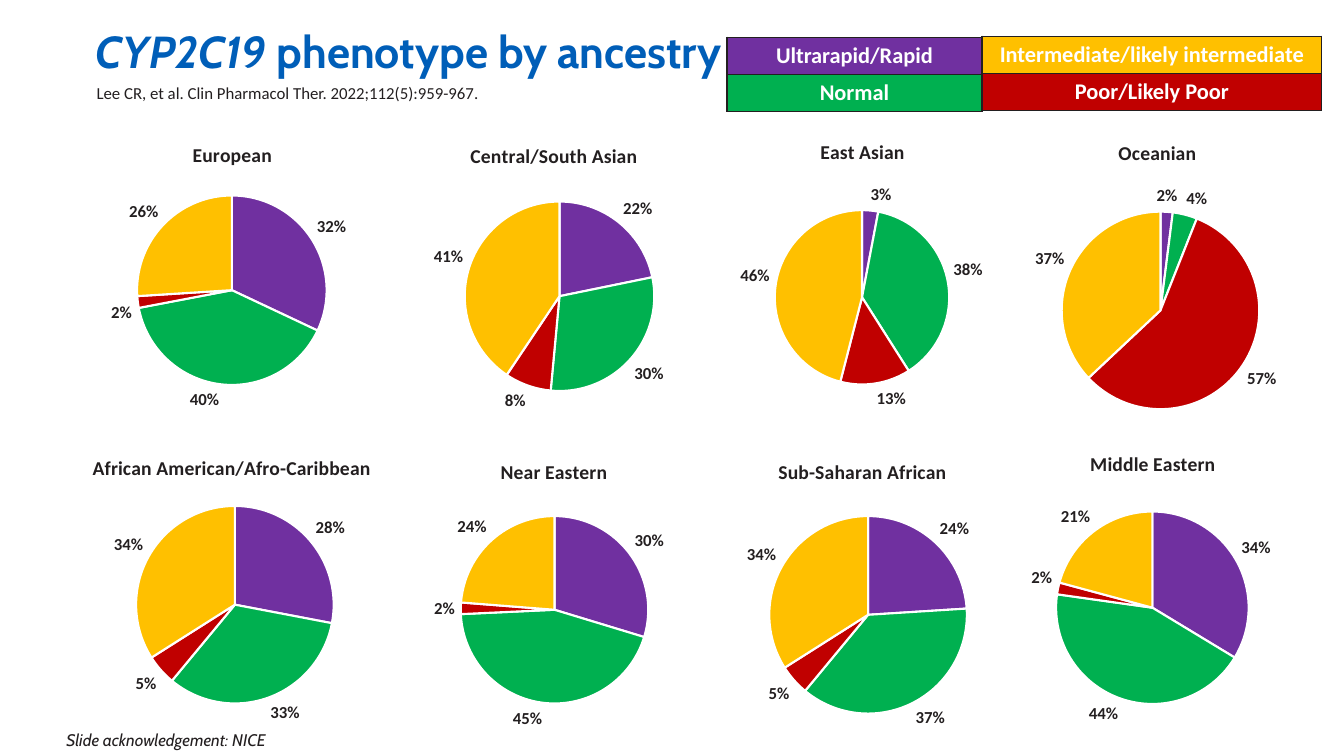
import lxml.etree
import pptx
import pptx.chart.data
import pptx.dml.color
import pptx.enum.chart
import pptx.enum.text
import pptx.oxml.ns
import pptx.util

PX = 9144
WIDTH, HEIGHT = 1333, 750
color = pptx.dml.color.RGBColor.from_string
qn = pptx.oxml.ns.qn

theme = {
    "ink": "231F20",
    "heading": "005EB8",
    "white": "FFFFFF",
    "Ultrarapid/Rapid": "7030A0",
    "Normal": "00B050",
    "Poor/Likely Poor": "C00000",
    "Intermediate/likely intermediate": "FFC000",
    "display": "Cabin",
    "body": "Calibri",
    "heading_size": 32,
    "legend_size": 16,
    "ancestry_size": 14,
    "label_size": 12,
    "chart_size": 10,
}
phenotypes = ["Ultrarapid/Rapid", "Normal", "Poor/Likely Poor", "Intermediate/likely intermediate"]


def style(font, size, face, ink, bold=False, italic=False):
    font.size = pptx.util.Pt(theme[size])
    font.name = theme[face]
    font.color.rgb = color(theme[ink])
    font.bold = bold
    font.italic = italic


def add_text(left, top, width, height, text):
    box = page.shapes.add_textbox(left * PX, top * PX, width * PX, height * PX)
    box.text_frame.word_wrap = True
    box.text_frame.text = text
    return box.text_frame


deck = pptx.Presentation()
deck.slide_width = WIDTH * PX
deck.slide_height = HEIGHT * PX
page = deck.slides.add_slide(deck.slide_layouts[6])

heading = add_text(85, 31, 686, 45, "CYP2C19")
heading.vertical_anchor = pptx.enum.text.MSO_ANCHOR.MIDDLE
para = heading.paragraphs[0]
para.line_spacing = 0.9
para.add_run().text = " phenotype by ancestry"
for span, italic in zip(para.runs, (True, False)):
    style(span.font, "heading_size", "display", "heading", True, italic)

# ancestry, chart frame (left, top, width, height), pie (centre x, centre y, diameter), percentages
ancestries = [
    ("African American/Afro-Caribbean", (-20, 436, 500, 299), (233, 600, 196), (28, 33, 5, 34)),
    ("European", (-19, 125, 499, 297), (230, 288, 188), (32, 40, 2, 26)),
    ("Central/South Asian", (300, 126, 499, 299), (555, 294, 188), (22, 30, 8, 41)),
    ("East Asian", (606, 122, 499, 299), (855, 295, 173), (3, 38, 13, 46)),
    ("Near Eastern", (300, 440, 499, 297), (550, 605, 186), (30, 45, 2, 24)),
    ("Sub-Saharan African", (605, 440, 501, 302), (861, 610, 196), (24, 37, 5, 34)),
    ("Middle Eastern", (893, 432, 501, 303), (1143, 603, 191), (34, 44, 2, 21)),
    ("Oceanian", (898, 123, 500, 297), (1151, 308, 196), (2, 4, 57, 37)),
]
for ancestry, frame, pie, percentages in ancestries:
    left, top, width, height = frame
    center_x, center_y, diameter = pie
    chart_data = pptx.chart.data.CategoryChartData(number_format="0%")
    chart_data.categories = ["1", "2", "3", "4"]
    chart_data.add_series("Series 1", [value / 100 for value in percentages])
    chart = page.shapes.add_chart(
        pptx.enum.chart.XL_CHART_TYPE.PIE, *[length * PX for length in frame], chart_data
    ).chart
    style(chart.font, "chart_size", "body", "ink")
    chart.has_legend = False
    chart.has_title = True
    chart.chart_title.text_frame.text = ancestry
    style(chart.chart_title.text_frame.paragraphs[0].runs[0].font, "ancestry_size", "body", "ink", True)

    plot = chart.plots[0]
    plot.vary_by_categories = True
    plot.has_data_labels = True
    labels = plot.data_labels
    labels.show_value = True
    labels.show_percentage = False
    labels.number_format = "0%"
    labels.number_format_is_linked = False
    labels.position = pptx.enum.chart.XL_LABEL_POSITION.OUTSIDE_END
    style(labels.font, "label_size", "body", "ink", True)
    for index, phenotype in enumerate(phenotypes):
        sector = plot.series[0].points[index].format
        sector.fill.solid()
        sector.fill.fore_color.rgb = color(theme[phenotype])
        sector.line.color.rgb = color(theme["white"])
        sector.line.width = pptx.util.Pt(1.5)

    plot_area = chart._chartSpace.find(qn("c:chart")).find(qn("c:plotArea"))
    for old_layout in plot_area.findall(qn("c:layout")):
        plot_area.remove(old_layout)
    layout = lxml.etree.Element(qn("c:layout"))
    plot_area.insert(0, layout)
    manual = lxml.etree.SubElement(layout, qn("c:manualLayout"))
    settings = {
        "layoutTarget": "inner",
        "xMode": "edge",
        "yMode": "edge",
        "x": (center_x - diameter / 2 - left) / width,
        "y": (center_y - diameter / 2 - top) / height,
        "w": diameter / width,
        "h": diameter / height,
    }
    for tag, value in settings.items():
        lxml.etree.SubElement(manual, qn(f"c:{tag}")).set("val", str(value))

legends = [
    ((721, 37, 253, 73), ("Ultrarapid/Rapid", "Normal")),
    ((974, 36, 337, 73), ("Intermediate/likely intermediate", "Poor/Likely Poor")),
]
for frame, names in legends:
    table = page.shapes.add_table(2, 1, *[length * PX for length in frame]).table
    table.first_row = False
    table.horz_banding = False
    for row, name in enumerate(names):
        cell = table.cell(row, 0)
        cell.text_frame.text = name
        cell.vertical_anchor = pptx.enum.text.MSO_ANCHOR.MIDDLE
        para = cell.text_frame.paragraphs[0]
        para.alignment = pptx.enum.text.PP_ALIGN.CENTER
        style(para.runs[0].font, "legend_size", "body", "white", True)
        properties = cell._tc.get_or_add_tcPr()
        for side in ("lnL", "lnR", "lnT", "lnB"):
            border = lxml.etree.SubElement(properties, qn(f"a:{side}"), w=str(pptx.util.Pt(1)))
            fill = lxml.etree.SubElement(border, qn("a:solidFill"))
            lxml.etree.SubElement(fill, qn("a:srgbClr"), val=theme["ink"])
        cell.fill.solid()
        cell.fill.fore_color.rgb = color(theme[name])

citation = add_text(86, 77, 439, 30, "Lee CR, et al. Clin Pharmacol Ther. 2022;112(5):959-967.")
style(citation.paragraphs[0].runs[0].font, "label_size", "body", "ink")
credit = add_text(56, 719, 229, 30, "Slide acknowledgement: NICE")
style(credit.paragraphs[0].runs[0].font, "label_size", "display", "ink", italic=True)

deck.save("out.pptx")
